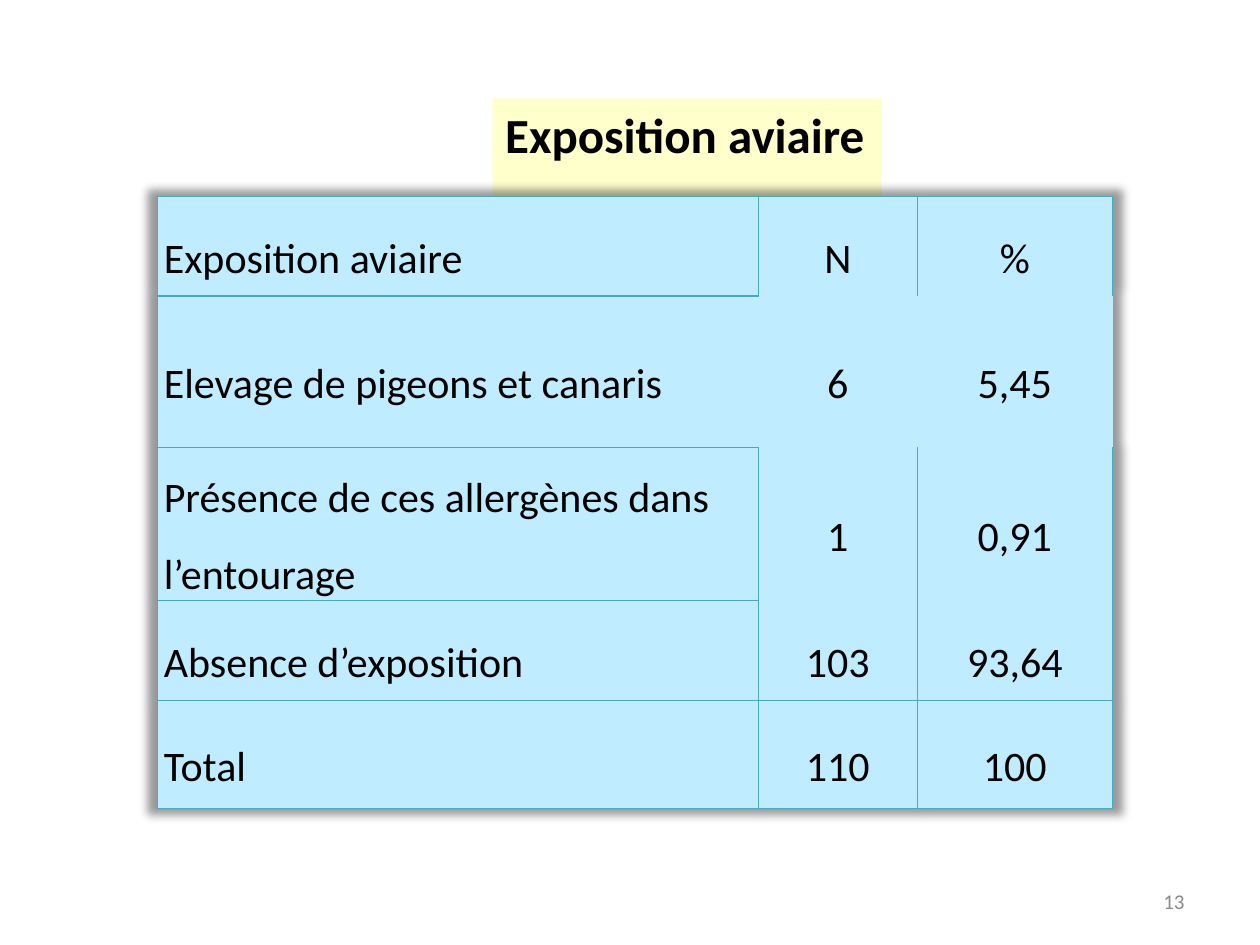
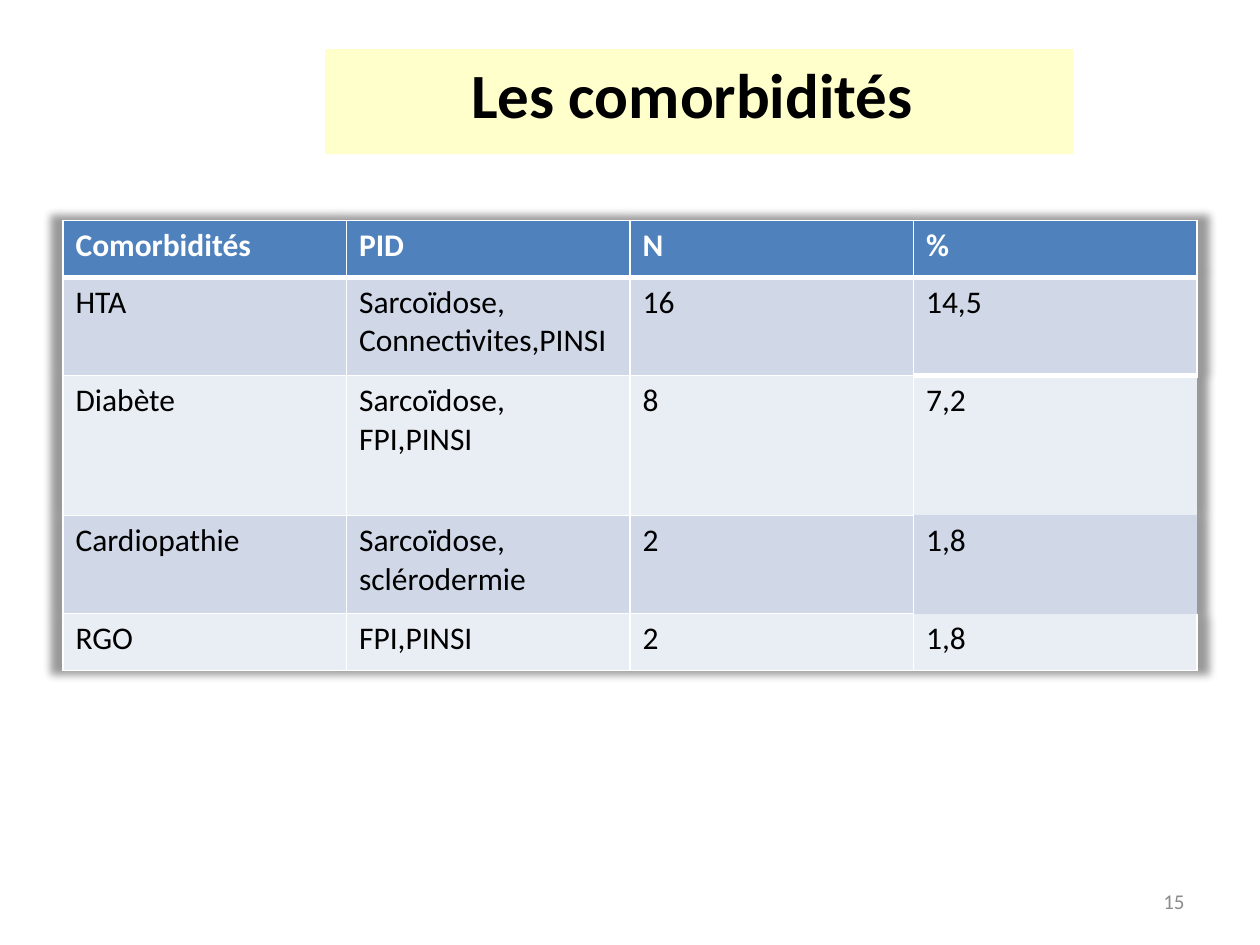
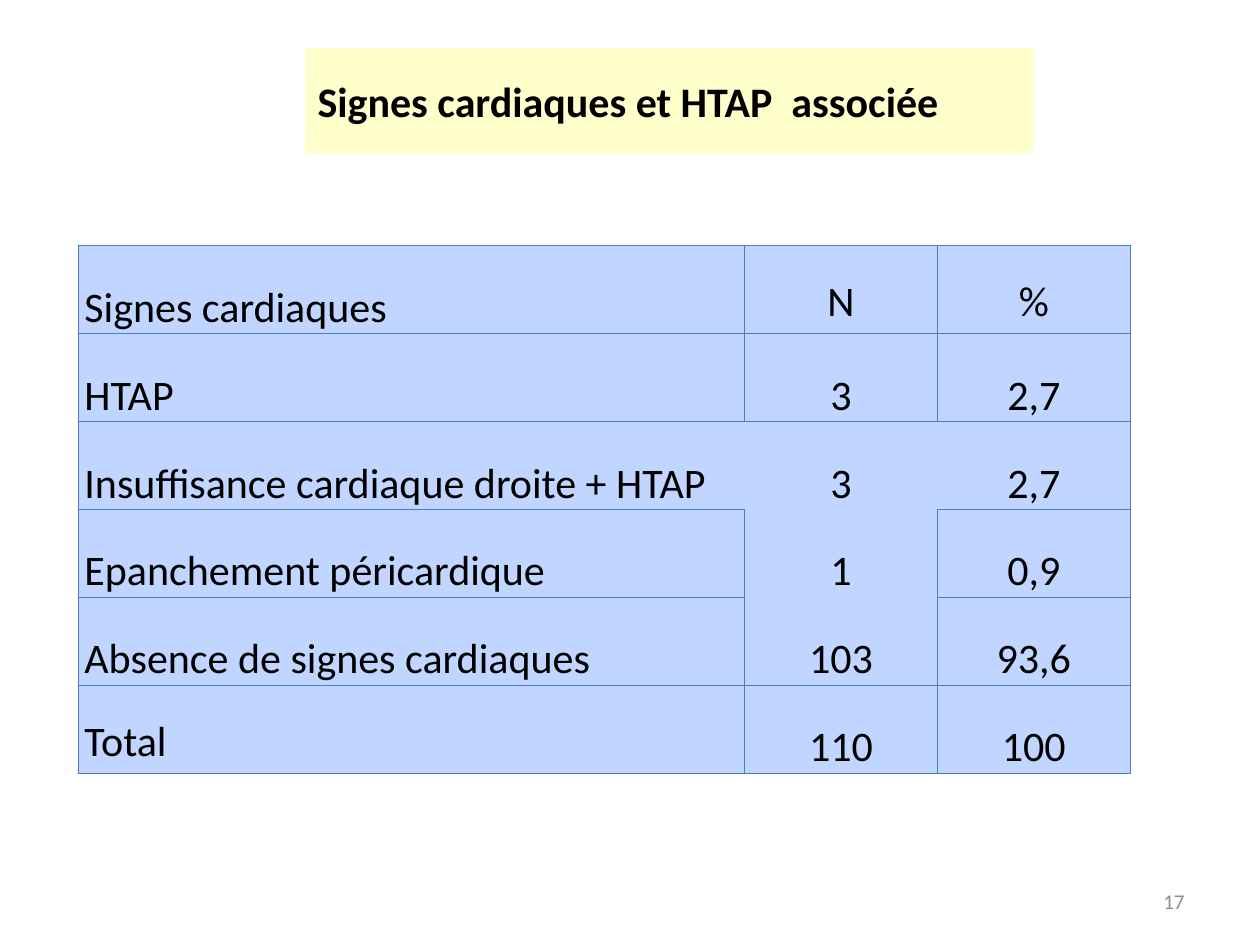
from dataclasses import dataclass, field

import lxml.etree
import pptx
import pptx.dml.color
import pptx.enum.text
import pptx.oxml
import pptx.oxml.ns
import pptx.presentation
import pptx.slide
import pptx.table
import pptx.text.text
import pptx.util

RGBColor = pptx.dml.color.RGBColor
Align = pptx.enum.text.PP_ALIGN
Anchor = pptx.enum.text.MSO_ANCHOR
qn = pptx.oxml.ns.qn

# Shared look
FONT = "Calibri"
BLACK = RGBColor(0x00, 0x00, 0x00)
WHITE = RGBColor(0xFF, 0xFF, 0xFF)
GREY = RGBColor(0x8C, 0x8C, 0x8C)
TITLE_BAND = RGBColor(0xFF, 0xFF, 0xCC)
SKY = RGBColor(0xBF, 0xEC, 0xFF)
TEAL = RGBColor(0x46, 0xAA, 0xC5)
PERIWINKLE = RGBColor(0xC0, 0xD5, 0xFF)
STEEL = RGBColor(0x4B, 0x7E, 0xBC)
HEADER_BLUE = RGBColor(0x4F, 0x81, 0xBD)
BAND_DARK = RGBColor(0xD0, 0xD8, 0xE8)
BAND_LIGHT = RGBColor(0xE9, 0xED, 0xF4)

# The slide is a grid of 100 columns by 75 rows
SLIDE_WIDTH = pptx.util.Inches(10)
SLIDE_HEIGHT = pptx.util.Inches(7.5)
COLUMN = SLIDE_WIDTH / 100
ROW = SLIDE_HEIGHT / 75

TITLE_ONLY = 5
PLAIN_TABLE_STYLE = "{2D5ABB26-0587-4C30-8999-92F81FD0307C}"
SIDES = "lrtb"
SHADOW = (
    f'<a:effectLst {pptx.oxml.ns.nsdecls("a")}>'
    '<a:outerShdw blurRad="63500" sx="102000" sy="102000" algn="ctr" rotWithShape="0">'
    '<a:prstClr val="black"><a:alpha val="40000"/></a:prstClr>'
    "</a:outerShdw></a:effectLst>"
)


@dataclass(frozen=True)
class Box:
    left: float
    top: float
    width: float
    height: float

    def emu(self) -> tuple[int, ...]:
        return (round(self.left * COLUMN), round(self.top * ROW),
                round(self.width * COLUMN), round(self.height * ROW))


@dataclass(frozen=True)
class Title:
    text: str
    box: Box
    size: int
    align: Align = Align.LEFT
    anchor: Anchor = Anchor.TOP
    wrap: bool = True


@dataclass(frozen=True)
class TableLook:
    fills: tuple[RGBColor, ...]  # body rows take these in turn
    header_fill: RGBColor
    header_color: RGBColor
    border: RGBColor
    border_width: float
    header_rule: float
    size: int
    anchor: Anchor
    spacious: bool = True  # narrow insets, wide lines, centred figures
    shadow: bool = True


@dataclass(frozen=True)
class Results:
    page: int
    title: Title
    look: TableLook
    corner: tuple[float, float]
    widths: tuple[float, ...]
    heights: tuple[float, ...]
    rows: tuple[tuple[str, ...], ...]
    open_cells: dict[tuple[int, int], str] = field(default_factory=dict)  # sides kept
    middle_cells: tuple[tuple[int, int], ...] = ()


PAGE_BOX = Box(71.7, 69.5, 23.3, 4)

AVIAN_LOOK = TableLook((SKY,), SKY, BLACK, TEAL, 0.75, 0.75, 24, Anchor.MIDDLE)
COMORBIDITY_LOOK = TableLook((BAND_DARK, BAND_LIGHT), HEADER_BLUE, WHITE, WHITE, 1, 3, 18,
                             Anchor.TOP, spacious=False)
CARDIAC_LOOK = TableLook((PERIWINKLE,), PERIWINKLE, BLACK, STEEL, 0.75, 0.75, 24,
                         Anchor.BOTTOM, shadow=False)

SLIDES = (
    Results(
        13,
        Title("Exposition aviaire", Box(39.1, 7.8, 30.9, 5.7), 28, wrap=False),
        AVIAN_LOOK, (12.5, 15.6), (47.7, 12.6, 15.5), (7.9, 12, 12.2, 7.9, 8.6),
        (
            ("Exposition aviaire", "N", "%"),
            ("Elevage de pigeons et canaris", "6", "5,45"),
            ("Présence de ces allergènes dans l’entourage", "1", "0,91"),
            ("Absence d’exposition", "103", "93,64"),
            ("Total", "110", "100"),
        ),
        {(0, 1): "ltr", (0, 2): "ltr", (1, 0): "ltb", (1, 1): "", (1, 2): "",
         (2, 1): "lr", (2, 2): "lr", (3, 1): "lrb", (3, 2): "lrb"},
    ),
    Results(
        15,
        Title("Les comorbidités ", Box(25.8, 3.9, 59.4, 7.1), 36, Align.CENTER),
        COMORBIDITY_LOOK, (5, 17.5), (22.5,) * 4, (4.5, 7.8, 11.1, 7.8, 4.5),
        (
            ("Comorbidités", "PID", "N", "%"),
            ("HTA", "Sarcoïdose,\nConnectivites,PINSI", "16", "14,5"),
            ("Diabète", "Sarcoïdose,\nFPI,PINSI", "8", "7,2"),
            ("Cardiopathie", "Sarcoïdose,\nsclérodermie", "2", "1,8"),
            ("RGO", "FPI,PINSI", "2", "1,8"),
        ),
        {(1, 3): "ltr", (2, 2): "ltb", (2, 3): "", (3, 2): "ltb", (3, 3): "", (4, 3): "lrb"},
    ),
    Results(
        17,
        Title("Signes cardiaques et HTAP  associée", Box(24.2, 5.5, 57.8, 5), 24,
              anchor=Anchor.MIDDLE),
        CARDIAC_LOOK, (6.2, 19.5), (52.9, 15.3, 15.3), (6.98,) * 6,
        (
            ("Signes cardiaques", "N", "%"),
            ("HTAP", "3", "2,7"),
            ("Insuffisance cardiaque droite + HTAP", "3", "2,7"),
            ("Epanchement péricardique", "1", "0,9"),
            ("Absence de signes cardiaques", "103", "93,6"),
            ("Total", "110", "100"),
        ),
        {(1, 1): "ltr", (2, 0): "ltb", (2, 1): "", (2, 2): "trb", (3, 1): "lr", (4, 1): "lrb"},
        ((0, 1), (0, 2), (5, 0)),
    ),
)


def format_text(frame: pptx.text.text.TextFrame, size: int, color: RGBColor,
                align: Align, bold: bool = False, spacing: float = 1.0) -> None:
    for paragraph in frame.paragraphs:
        paragraph.alignment = align
        paragraph.line_spacing = spacing
        paragraph.font.name = FONT
        paragraph.font.size = pptx.util.Pt(size)
        paragraph.font.bold = bold
        paragraph.font.color.rgb = color


def draw_title(slide: pptx.slide.Slide, title: Title) -> None:
    band = slide.shapes.title
    band.left, band.top, band.width, band.height = title.box.emu()
    band.fill.solid()
    band.fill.fore_color.rgb = TITLE_BAND
    frame = band.text_frame
    frame.text = title.text
    frame.word_wrap = title.wrap
    frame.auto_size = pptx.enum.text.MSO_AUTO_SIZE.SHAPE_TO_FIT_TEXT
    frame.vertical_anchor = title.anchor
    format_text(frame, title.size, BLACK, title.align, bold=True)


def draw_page_number(slide: pptx.slide.Slide, page: int) -> None:
    frame = slide.shapes.add_textbox(*PAGE_BOX.emu()).text_frame
    frame.text = str(page)
    frame.word_wrap = True
    frame.vertical_anchor = Anchor.MIDDLE
    format_text(frame, 12, GREY, Align.RIGHT)


def draw_borders(cell: pptx.table._Cell, sides: str, color: RGBColor,
                 widths: dict[str, float]) -> None:
    properties = cell._tc.get_or_add_tcPr()
    for position, side in enumerate(s for s in SIDES if s in sides):
        line = lxml.etree.Element(qn(f"a:ln{side.upper()}"), w=str(pptx.util.Pt(widths[side])))
        paint = lxml.etree.SubElement(line, qn("a:solidFill"))
        lxml.etree.SubElement(paint, qn("a:srgbClr"), val=str(color))
        properties.insert(position, line)


def draw_cell(cell: pptx.table._Cell, results: Results, row: int, column: int) -> None:
    look = results.look
    header = row == 0
    cell.text = results.rows[row][column]
    cell.vertical_anchor = (Anchor.MIDDLE if (row, column) in results.middle_cells
                            else look.anchor)
    if look.spacious:
        cell.margin_left = cell.margin_right = pptx.util.Inches(0.05)
        cell.margin_top = cell.margin_bottom = 0
    format_text(cell.text_frame, look.size, look.header_color if header else BLACK,
                Align.CENTER if look.spacious and column else Align.LEFT,
                bold=header and not look.spacious, spacing=1.5 if look.spacious else 1.0)

    cell.fill.solid()
    cell.fill.fore_color.rgb = (look.header_fill if header
                                else look.fills[(row - 1) % len(look.fills)])
    widths = dict.fromkeys(SIDES, look.border_width)
    if header:
        widths["b"] = look.header_rule
    elif row == 1:
        widths["t"] = look.header_rule
    draw_borders(cell, results.open_cells.get((row, column), SIDES), look.border, widths)


def draw_table(slide: pptx.slide.Slide, results: Results) -> None:
    box = Box(*results.corner, sum(results.widths), sum(results.heights))
    table = slide.shapes.add_table(len(results.heights), len(results.widths), *box.emu()).table
    table.first_row = table.horz_banding = False
    properties = table._tbl.tblPr
    properties.find(qn("a:tableStyleId")).text = PLAIN_TABLE_STYLE
    if results.look.shadow:
        properties.insert(0, pptx.oxml.parse_xml(SHADOW))

    for table_column, width in zip(table.columns, results.widths):
        table_column.width = round(width * COLUMN)
    for table_row, height in zip(table.rows, results.heights):
        table_row.height = round(height * ROW)
    for row, texts in enumerate(results.rows):
        for column in range(len(texts)):
            draw_cell(table.cell(row, column), results, row, column)


def main() -> None:
    deck = pptx.Presentation()
    deck.slide_width, deck.slide_height = SLIDE_WIDTH, SLIDE_HEIGHT
    for results in SLIDES:
        slide = deck.slides.add_slide(deck.slide_layouts[TITLE_ONLY])
        draw_title(slide, results.title)
        draw_table(slide, results)
        draw_page_number(slide, results.page)
    deck.save("out.pptx")


if __name__ == "__main__":
    main()
